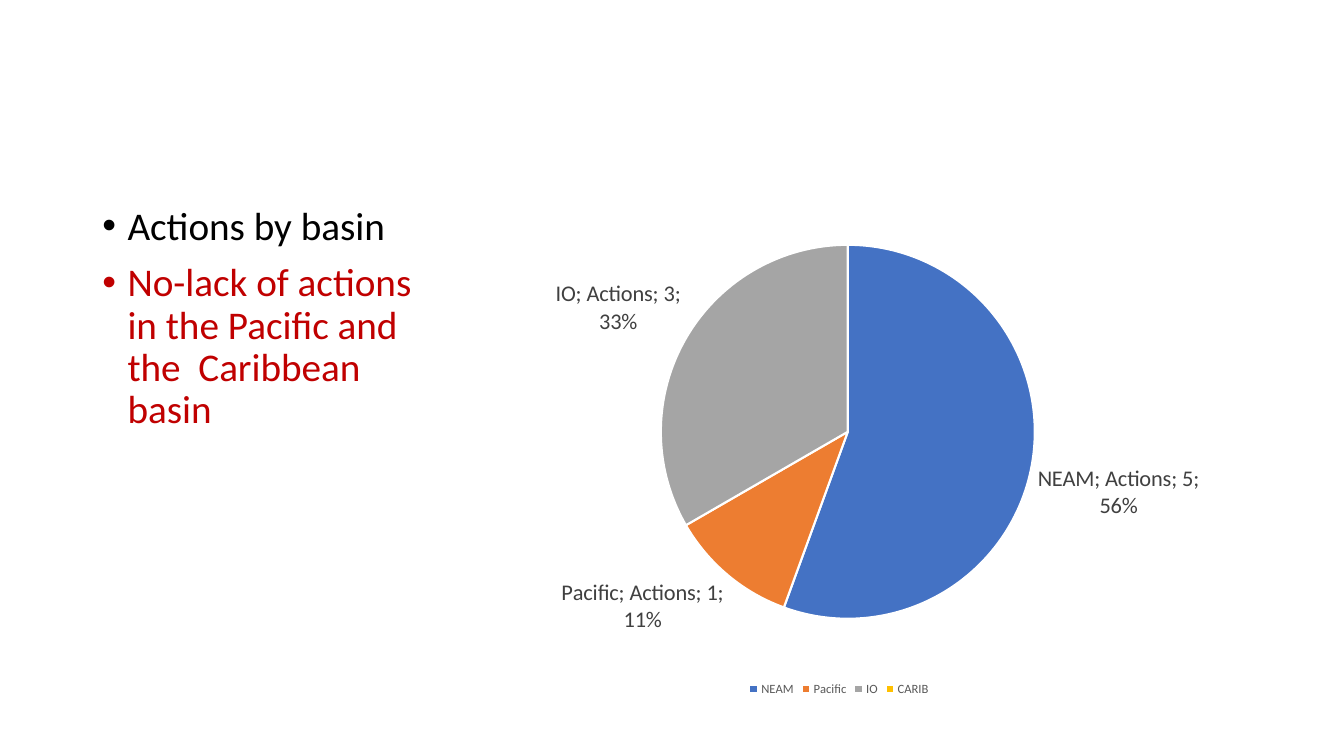
from lxml import etree
from pptx import Presentation
from pptx.chart.data import CategoryChartData
from pptx.dml.color import RGBColor
from pptx.enum import chart as ch
from pptx.oxml import parse_xml
from pptx.oxml.ns import nsdecls, qn
from pptx.util import Pt

FONT = "Calibri"
BASINS = [("NEAM", 5, "4472C4"), ("Pacific", 1, "ED7D31"),
          ("IO", 3, "A5A5A5"), ("CARIB", 0, "FFC000")]


def rgb(value):
    return RGBColor.from_string(value)


def set_font(font, size, color):
    font.name, font.size = FONT, Pt(size)
    font.color.rgb = rgb(color)


def add_bullet(p, content, size=28, color="000000", indent=18):
    p.line_spacing, p.space_before = 0.9, Pt(10)
    pPr = p._p.get_or_add_pPr()
    pPr.set("marL", str(Pt(indent)))
    pPr.set("indent", str(-Pt(indent)))
    etree.SubElement(pPr, qn("a:buFont")).set("typeface", "Arial")
    etree.SubElement(pPr, qn("a:buChar")).set("char", "•")
    r = p.add_run()
    r.text = content
    set_font(r.font, size, color)


def add_findings(slide, x, y, w, h):
    tf = slide.shapes.add_textbox(Pt(x), Pt(y), Pt(w), Pt(h)).text_frame
    tf.word_wrap = True
    add_bullet(tf.paragraphs[0], "Actions by basin")
    add_bullet(tf.add_paragraph(),
               "No-lack of actions in the Pacific and the  Caribbean basin",
               color="C00000")


def set_plot_layout(chart, **fractions):
    """Fix the inner plot area at fractions of the chart's size."""
    parts = "".join(f'<c:{k} val="{v}"/>' for k, v in fractions.items())
    layout = parse_xml(
        f'<c:layout {nsdecls("c")}><c:manualLayout><c:layoutTarget val="inner"/>'
        f'<c:xMode val="edge"/><c:yMode val="edge"/>{parts}'
        '</c:manualLayout></c:layout>')
    area = chart._chartSpace.chart.plotArea
    for old in area.findall(qn("c:layout")):
        area.remove(old)
    area.insert(0, layout)


def add_basin_pie(slide, x, y, w, h):
    names, counts, colors = zip(*BASINS)
    data = CategoryChartData()
    data.categories = names
    data.add_series("Actions", counts)
    chart = slide.shapes.add_chart(ch.XL_CHART_TYPE.PIE, Pt(x), Pt(y),
                                   Pt(w), Pt(h), data).chart
    set_font(chart.font, 10, "000000")
    chart.has_title = False
    chart.has_legend = True
    chart.legend.position = ch.XL_LEGEND_POSITION.BOTTOM
    chart.legend.include_in_layout = False
    set_font(chart.legend.font, 9, "595959")
    set_plot_layout(chart, x=0.284, y=0.05, w=0.453, h=0.78)

    plot = chart.plots[0]
    plot.vary_by_categories = True
    series = plot.series[0]
    for i, color in enumerate(colors):
        fmt = series.points[i].format
        fmt.fill.solid()
        fmt.fill.fore_color.rgb = rgb(color)
        fmt.line.color.rgb = rgb("FFFFFF")
        fmt.line.width = Pt(1.5)

    labels = series.data_labels
    labels.show_value = labels.show_percentage = True
    labels.show_category_name = labels.show_series_name = True
    labels.position = ch.XL_LABEL_POSITION.OUTSIDE_END
    set_font(labels.font, 16, "404040")
    # Empty slices carry no label
    dLbls = series._element.find(qn("c:dLbls"))
    for i in (i for i, count in enumerate(counts) if not count):
        dLbls.insert(0, parse_xml(f'<c:dLbl {nsdecls("c")}><c:idx val="{i}"/>'
                                  '<c:delete val="1"/></c:dLbl>'))


def main():
    prs = Presentation()
    prs.slide_width, prs.slide_height = Pt(960), Pt(540)
    slide = prs.slides.add_slide(prs.slide_layouts[6])
    add_findings(slide, 66, 144, 256.5, 342.7)
    add_basin_pie(slide, 304.6, 157.7, 589.7, 342.7)
    prs.save("out.pptx")


if __name__ == "__main__":
    main()
